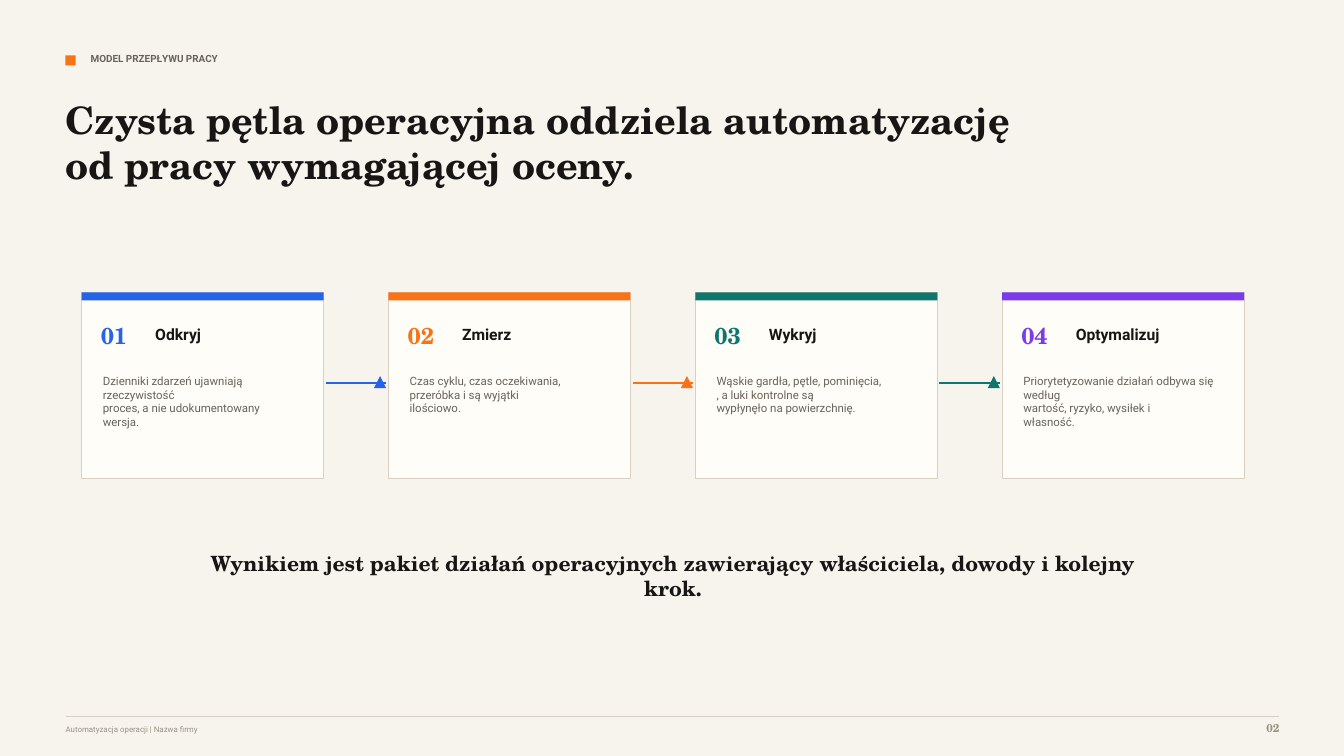
from pptx import Presentation
from pptx.dml.color import RGBColor
from pptx.enum.shapes import MSO_CONNECTOR, MSO_SHAPE
from pptx.enum.text import MSO_ANCHOR, MSO_AUTO_SIZE, PP_ALIGN
from pptx.oxml.ns import qn
from pptx.util import Inches, Pt

RECT, PEAK = MSO_SHAPE.RECTANGLE, MSO_SHAPE.ISOSCELES_TRIANGLE
LINE = MSO_CONNECTOR.STRAIGHT
TOP, FIXED = MSO_ANCHOR.TOP, MSO_AUTO_SIZE.NONE
LEFT, MID, RIGHT = PP_ALIGN.LEFT, PP_ALIGN.CENTER, PP_ALIGN.RIGHT

PAPER = RGBColor(0xF7, 0xF4, 0xEE)
CREAM = RGBColor(0xFF, 0xFD, 0xF8)
RULE = RGBColor(0xD9, 0xD0, 0xC3)
INK = RGBColor(0x17, 0x16, 0x14)
GRAY = RGBColor(0x69, 0x63, 0x5A)
PALE = RGBColor(0x9A, 0x91, 0x84)
BLUE = RGBColor(0x25, 0x63, 0xEB)
ORANGE = RGBColor(0xF9, 0x73, 0x16)
GREEN = RGBColor(0x0F, 0x76, 0x6E)
VIOLET = RGBColor(0x7C, 0x3A, 0xED)

SANS, SERIF = "Roboto", "TeX Gyre Schola"

# Page and card grid, in inches
WIDE, HIGH = 13.33, 7.5
EDGE, SPAN = 0.65, 12.04
CARD_W, CARD_H = 2.4, 1.85
ROW, FIRST, LAST = 2.9, 0.81, 9.94

STEPS = [
    ("Odkryj", BLUE, ["Dzienniki zdarzeń ujawniają rzeczywistość",
                      "proces, a nie udokumentowany", "wersja."]),
    ("Zmierz", ORANGE, ["Czas cyklu, czas oczekiwania,",
                        "przeróbka i są wyjątki", "ilościowo."]),
    ("Wykryj", GREEN, ["Wąskie gardła, pętle, pominięcia,",
                       ", a luki kontrolne są", "wypłynęło na powierzchnię."]),
    ("Optymalizuj", VIOLET, ["Priorytetyzowanie działań odbywa się według",
                             "wartość, ryzyko, wysiłek i", "własność."]),
]


def write(slide, text, x, y, w, h, box=None, size=8.2, face=SANS,
          color=INK, bold=False, align=LEFT):
    """Put text, a string or a list of paragraphs, in a box."""
    area = [Inches(v) for v in (x, y, w, h)]
    if box is None:
        box = slide.shapes.add_textbox(*area)
    box.left, box.top, box.width, box.height = area
    frame = box.text_frame
    frame.word_wrap, frame.auto_size = True, FIXED
    frame.vertical_anchor = TOP
    frame.margin_left = frame.margin_right = 0
    frame.margin_top = frame.margin_bottom = 0
    frame.text = text if isinstance(text, str) else "\n".join(text)
    for para in frame.paragraphs:
        para.alignment = align
        for run in para.runs:
            font = run.font
            font.name, font.size, font.bold = face, Pt(size), bold
            font.color.rgb = color


def block(slide, x, y, w, h, fill, kind=RECT, line=None):
    """Draw a filled shape, with a thin outline if a line colour is given."""
    shape = slide.shapes.add_shape(kind, *[Inches(v) for v in (x, y, w, h)])
    shape.shadow.inherit = False
    shape.fill.solid()
    shape.fill.fore_color.rgb = fill
    if line is None:
        shape.line.fill.background()
    else:
        shape.line.color.rgb = line
        shape.line.width = Pt(0.75)


def rule(slide, x, y, w, color, width):
    """Draw a level line."""
    line = slide.shapes.add_connector(
        LINE, Inches(x), Inches(y), Inches(x + w), Inches(y))
    line.line.color.rgb = color
    line.line.width = Pt(width)
    props = line._element.spPr
    props.append(props.makeelement(qn("a:effectLst"), {}))


def card(slide, x, num, name, color, body):
    block(slide, x, ROW, CARD_W, CARD_H, CREAM, line=RULE)
    block(slide, x, ROW, CARD_W, 0.08, color)
    write(slide, f"{num:02}", x + 0.19, ROW + 0.29, 0.46, 0.29,
          size=16.5, face=SERIF, color=color, bold=True)
    write(slide, name, x + 0.73, ROW + 0.32, 1.33, 0.21, size=11.2, bold=True)
    write(slide, body, x + 0.21, ROW + 0.81, 1.92, 0.71, color=GRAY)


def link(slide, x, color):
    """Join a card to the next with a line and a triangle."""
    y = ROW + 0.9
    rule(slide, x, y, 0.6, color, 1.7)
    block(slide, x + 0.48, y - 0.07, 0.12, 0.12, color, kind=PEAK)


def main():
    deck = Presentation()
    deck.slide_width, deck.slide_height = Inches(WIDE), Inches(HIGH)
    slide = deck.slides.add_slide(deck.slide_layouts[5])
    slide.background.fill.solid()
    slide.background.fill.fore_color.rgb = PAPER

    # Heading
    block(slide, EDGE, 0.55, 0.1, 0.1, ORANGE)
    write(slide, "MODEL PRZEPŁYWU PRACY", 0.9, 0.52, 6.46, 0.19,
          size=7.1, color=GRAY, bold=True)
    write(slide, "Czysta pętla operacyjna oddziela automatyzację "
          "od pracy wymagającej oceny.", EDGE, 0.96, 9.38, 1.08,
          box=slide.shapes.title, size=27, face=SERIF, bold=True)

    # Four steps
    pitch = (LAST - FIRST) / (len(STEPS) - 1)
    for i, (name, color, body) in enumerate(STEPS):
        x = FIRST + i * pitch
        card(slide, x, i + 1, name, color, body)
        if i < len(STEPS) - 1:
            link(slide, x + CARD_W + 0.02, color)

    # Result
    write(slide, "Wynikiem jest pakiet działań operacyjnych zawierający "
          "właściciela, dowody i kolejny krok.", 1.83, 5.46, 9.69, 0.44,
          size=15, face=SERIF, bold=True, align=MID)

    # Footer
    rule(slide, EDGE, 7.11, SPAN, RULE, 0.75)
    write(slide, "Automatyzacja operacji | Nazwa firmy",
          EDGE, 7.19, 7.92, 0.15, size=5.6, color=PALE)
    write(slide, "02", EDGE + SPAN - 0.5, 7.15, 0.5, 0.19,
          face=SERIF, color=PALE, bold=True, align=RIGHT)

    deck.save("out.pptx")


if __name__ == "__main__":
    main()
